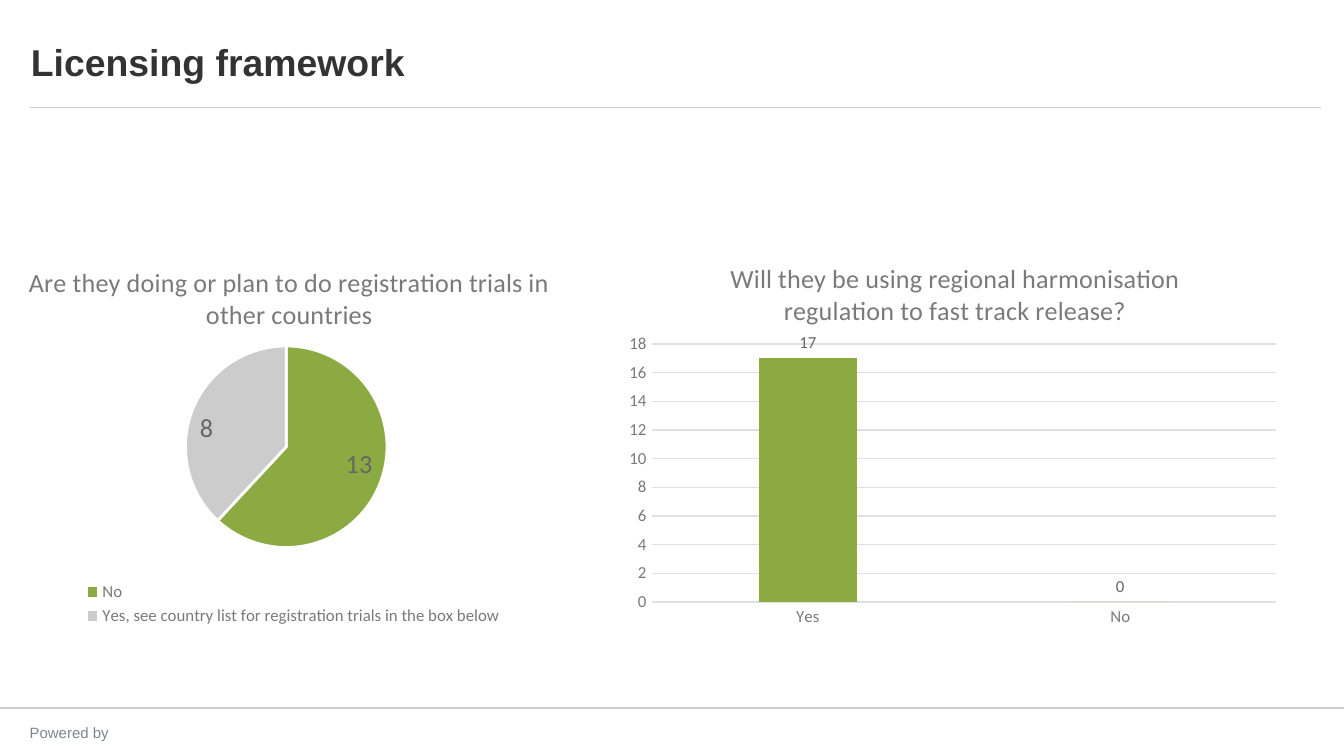
from pptx import Presentation
from pptx.chart.data import CategoryChartData
from pptx.dml.color import RGBColor
from pptx.enum.chart import (XL_CHART_TYPE as Kind, XL_LABEL_POSITION as LabelAt,
                             XL_LEGEND_POSITION as LegendAt, XL_TICK_MARK as Tick)
from pptx.enum.shapes import MSO_CONNECTOR as Connector
from pptx.enum.text import MSO_ANCHOR as Anchor, PP_ALIGN as Align
from pptx.oxml import parse_xml
from pptx.oxml.ns import nsdecls, qn
from pptx.util import Cm, Pt

TITLE = "Licensing framework"
FOOTER = "Powered by"
TRIALS = {
    "title": "Are they doing or plan to do registration trials in other countries",
    "kind": Kind.PIE,
    "values": {"No": 13,
               "Yes, see country list for registration trials in the box below": 8},
    "left": -0.94,
    "title_at": (0.11, 0.07),
    "plot_at": (0.35, 0.28, 0.3, 0.51),
}
HARMONISATION = {
    "title": "Will they be using regional harmonisation regulation to fast track release?",
    "kind": Kind.COLUMN_CLUSTERED,
    "values": {"Yes": 17, "No": 0},
    "left": 11.68,
    "title_at": (0.16, 0.06),
    "plot_at": (0.05, 0.28, 0.93, 0.64),
}
LEGEND_AT = (0.18, 0.86, 0.66, 0.13)
CHART_TOP, CHART_WIDTH, CHART_HEIGHT = 4.37, 12.7, 7.62
RULES = [(0, 25.4, 13.39, 1), (0.56, 24.97, 2.03, 0.5)]  # left, right, height, weight

THEME = {
    "green": "8BAB42", "grey": "CCCCCC", "grid": "E0E0E0", "white": "FFFFFF",
    "heading": {"name": "Arial", "size": 20, "bold": True, "color": "333333"},
    "footer": {"name": "Arial", "size": 8, "color": "7C878E"},
    "chart": {"name": "Calibri", "size": 10, "color": "333333"},
    "chart_title": {"name": "Calibri", "size": 14, "bold": False, "color": "7A7A7A"},
    "axis": {"name": "Calibri", "size": 9, "color": "7A7A7A"},
    "pie_label": {"name": "Calibri", "size": 14, "color": "666666"},
    "bar_label": {"name": "Calibri", "size": 9, "color": "666666"},
}


def rgb(name):
    return RGBColor.from_string(THEME.get(name, name))


def style(font, key):
    for field, value in THEME[key].items():
        if field == "color":
            font.color.rgb = rgb(value)
        else:
            setattr(font, field, Pt(value) if field == "size" else value)


def stroke(line, color, weight):
    line.color.rgb = rgb(color)
    line.width = Pt(weight)


def fill(target, color):
    target.format.fill.solid()
    target.format.fill.fore_color.rgb = rgb(color)


def place(element, index, position):
    """Give a chart part a fixed place, in fractions of the chart."""
    for old in element.findall(qn("c:layout")):
        element.remove(old)
    target = '<c:layoutTarget val="inner"/>' if element.tag == qn("c:plotArea") else ""
    modes = "".join(f'<c:{axis}Mode val="edge"/>' for axis in "xy")
    sizes = "".join(f'<c:{axis} val="{value}"/>' for axis, value in zip("xywh", position))
    element.insert(index, parse_xml(
        f'<c:layout {nsdecls("c")}><c:manualLayout>{target}{modes}{sizes}'
        "</c:manualLayout></c:layout>"))


def add_rule(page, left, right, height, weight):
    rule = page.shapes.add_connector(Connector.STRAIGHT, Cm(left), Cm(height),
                                     Cm(right), Cm(height))
    stroke(rule.line, "grey", weight)
    rule._element.spPr.append(parse_xml(f'<a:effectLst {nsdecls("a")}/>'))


def add_titled_chart(page, content):
    data = CategoryChartData()
    data.categories = list(content["values"])
    data.add_series("Series 1", list(content["values"].values()))
    chart = page.shapes.add_chart(content["kind"], Cm(content["left"]), Cm(CHART_TOP),
                                  Cm(CHART_WIDTH), Cm(CHART_HEIGHT), data).chart
    style(chart.font, "chart")
    chart.has_legend = False
    para = chart.chart_title.text_frame.paragraphs[0]
    span = para.add_run()
    span.text = content["title"]
    style(span.font, "chart_title")
    place(chart.chart_title._element, 1, content["title_at"])
    place(chart._chartSpace.chart.plotArea, 0, content["plot_at"])
    return chart


def show_values(plot, key, position):
    plot.has_data_labels = True
    labels = plot.data_labels
    labels.show_value = True
    labels.show_percentage = False
    labels.position = position
    style(labels.font, key)


def add_pie(page, content):
    chart = add_titled_chart(page, content)
    plot = chart.plots[0]
    plot.vary_by_categories = True
    for index, color in enumerate(("green", "grey")):
        point = plot.series[0].points[index]
        fill(point, color)
        stroke(point.format.line, "white", 1.5)
    show_values(plot, "pie_label", LabelAt.INSIDE_END)
    chart.has_legend = True
    chart.legend.position = LegendAt.BOTTOM
    chart.legend.include_in_layout = False
    style(chart.legend.font, "axis")
    place(chart.legend._element, 1, LEGEND_AT)


def add_columns(page, content):
    chart = add_titled_chart(page, content)
    plot = chart.plots[0]
    for field, value in {"vary_by_categories": False, "gap_width": 219,
                         "overlap": -27}.items():
        setattr(plot, field, value)
    fill(plot.series[0], "green")
    show_values(plot, "bar_label", LabelAt.OUTSIDE_END)
    for axis in (chart.category_axis, chart.value_axis):
        axis.major_tick_mark = axis.minor_tick_mark = Tick.NONE
        style(axis.tick_labels.font, "axis")
    stroke(chart.category_axis.format.line, "grid", 0.75)
    scale = chart.value_axis
    for field, value in {"minimum_scale": 0, "maximum_scale": 18, "major_unit": 2,
                         "has_major_gridlines": True}.items():
        setattr(scale, field, value)
    stroke(scale.major_gridlines.format.line, "grid", 0.75)
    scale.format.line.fill.background()


def write(box, text, key, anchor, align):
    frame = box.text_frame
    frame.word_wrap = True
    frame.vertical_anchor = anchor
    para = frame.paragraphs[0]
    para.alignment = align
    span = para.add_run()
    span.text = text
    style(span.font, key)


def main():
    deck = Presentation()
    deck.slide_width, deck.slide_height = Cm(25.4), Cm(14.29)
    page = deck.slides.add_slide(deck.slide_layouts[5])
    for rule in RULES:
        add_rule(page, *rule)
    footer = page.shapes.add_textbox(Cm(-0.15), Cm(13.56), Cm(2.92), Cm(0.46))
    write(footer, FOOTER, "footer", Anchor.TOP, Align.CENTER)
    heading = page.shapes.title
    for field, value in {"left": 0.33, "top": 0.25, "width": 22.86, "height": 1.47}.items():
        setattr(heading, field, Cm(value))
    write(heading, TITLE, "heading", Anchor.BOTTOM, Align.LEFT)
    add_pie(page, TRIALS)
    add_columns(page, HARMONISATION)
    deck.save("out.pptx")


if __name__ == "__main__":
    main()
